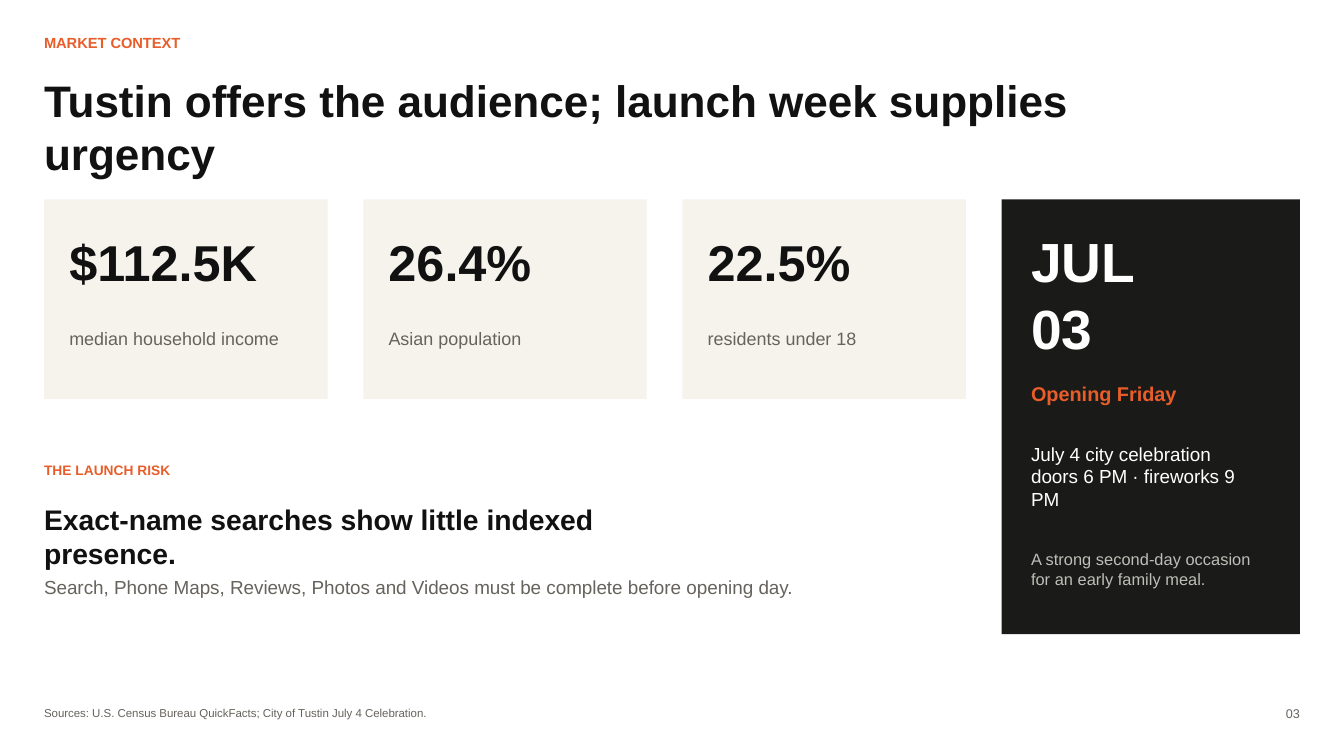
"""Build the market context slide for the Tustin launch."""
from pptx import Presentation
from pptx.dml.color import RGBColor
from pptx.enum.shapes import MSO_SHAPE
from pptx.enum.text import MSO_ANCHOR, MSO_AUTO_SIZE, PP_ALIGN
from pptx.util import Pt

INK = RGBColor(0x11, 0x11, 0x11)
GRAY = RGBColor(0x66, 0x63, 0x5D)
ORANGE = RGBColor(0xE8, 0x5D, 0x2A)
CREAM = RGBColor(0xF6, 0xF3, 0xED)
CHARCOAL = RGBColor(0x1A, 0x1A, 0x18)
SILVER = RGBColor(0xBF, 0xBF, 0xB9)
WHITE = RGBColor(0xFF, 0xFF, 0xFF)

MARGIN = 31.5
CARD_TOP = 142.5
CARD_SIZE = 202.5
CARD_HEIGHT = 142.5
CARD_STEP = 228
CARD_INSET = 18
PANEL_WIDTH = 213
PANEL_HEIGHT = 310.5
PANEL_INSET = 21

FORMATS = {
    "kicker": {"size": Pt(10.5), "bold": True, "color": ORANGE},
    "title": {"size": Pt(31.5), "bold": True, "color": INK},
    "value": {"size": Pt(36), "bold": True, "color": INK},
    "label": {"size": Pt(12.8), "bold": False, "color": GRAY},
    "date": {"size": Pt(39.4), "bold": True, "color": WHITE},
    "day": {"size": Pt(14.2), "bold": True, "color": ORANGE},
    "event": {"size": Pt(13.5), "bold": False, "color": WHITE},
    "remark": {"size": Pt(11.7), "bold": False, "color": SILVER},
    "risk kicker": {"size": Pt(9.8), "bold": True, "color": ORANGE},
    "risk": {"size": Pt(20.2), "bold": True, "color": INK},
    "detail": {"size": Pt(13.5), "bold": False, "color": GRAY},
    "source": {"size": Pt(8.2), "bold": False, "color": GRAY},
    "number": {"size": Pt(9), "bold": False, "color": GRAY},
}

TITLE = "Tustin offers the audience; launch week supplies urgency"
STATISTICS = [
    ("$112.5K", "median household income"),
    ("26.4%", "Asian population"),
    ("22.5%", "residents under 18"),
]
PANEL_TEXTS = [
    ("date", "JUL\v03", 162.75, 165, 94.5),
    ("day", "Opening Friday", 272.25, 165, 21),
    ("event", "July 4 city celebration\vdoors 6 PM · fireworks 9 PM", 316, 162, 57),
    ("remark", "A strong second-day occasion for an early family meal.", 392.5, 160.5, 42),
]
MARGIN_TEXTS = [
    ("kicker", "MARKET CONTEXT", 24, 262.5, 16.5),
    ("risk kicker", "THE LAUNCH RISK", 330, 195, 15),
    ("risk", "Exact-name searches show little indexed presence.", 358.5, 487.5, 36),
    ("detail", "Search, Phone Maps, Reviews, Photos and Videos must be complete before opening day.",
     411, 592.5, 34.5),
    ("source", "Sources: U.S. Census Bureau QuickFacts; City of Tustin July 4 Celebration.",
     504, 802.5, 13.5),
]


def write(box, style, text, align=PP_ALIGN.LEFT):
    frame = box.text_frame
    settings = {
        "word_wrap": True, "auto_size": MSO_AUTO_SIZE.NONE, "vertical_anchor": MSO_ANCHOR.TOP,
        "margin_left": 0, "margin_top": 0, "margin_right": 0, "margin_bottom": 0,
    }
    for name, value in settings.items():
        setattr(frame, name, value)
    para = frame.paragraphs[0]
    para.text = text
    para.alignment = align
    for span in para.runs:
        span.font.name = "Arial"
        for name, value in FORMATS[style].items():
            if name == "color":
                span.font.color.rgb = value
            else:
                setattr(span.font, name, value)


def add_text(page, style, text, left, top, width, height, align=PP_ALIGN.LEFT):
    box = page.shapes.add_textbox(Pt(left), Pt(top), Pt(width), Pt(height))
    write(box, style, text, align)


def add_block(page, color, left, width, height):
    block = page.shapes.add_shape(
        MSO_SHAPE.RECTANGLE, Pt(left), Pt(CARD_TOP), Pt(width), Pt(height))
    block.shadow.inherit = False
    block.fill.solid()
    block.fill.fore_color.rgb = color
    block.line.fill.background()


def main():
    deck = Presentation()
    deck.slide_width, deck.slide_height = Pt(960), Pt(540)
    page = deck.slides.add_slide(deck.slide_layouts[5])

    title = page.shapes.title
    title.left, title.top, title.width, title.height = Pt(MARGIN), Pt(52.5), Pt(840), Pt(54)
    write(title, "title", TITLE)

    for index, (value, label) in enumerate(STATISTICS):
        left = MARGIN + index * CARD_STEP
        add_block(page, CREAM, left, CARD_SIZE, CARD_HEIGHT)
        add_text(page, "value", value, left + CARD_INSET, 165, 166.5, 52.5)
        add_text(page, "label", label, left + CARD_INSET, 234, 165, 33)

    panel_left = MARGIN + len(STATISTICS) * CARD_STEP
    add_block(page, CHARCOAL, panel_left, PANEL_WIDTH, PANEL_HEIGHT)
    for style, text, top, width, height in PANEL_TEXTS:
        add_text(page, style, text, panel_left + PANEL_INSET, top, width, height)

    for style, text, top, width, height in MARGIN_TEXTS:
        add_text(page, style, text, MARGIN, top, width, height)
    add_text(page, "number", "03", 894, 504, 34.5, 13.5, PP_ALIGN.RIGHT)

    deck.save("out.pptx")


if __name__ == "__main__":
    main()
